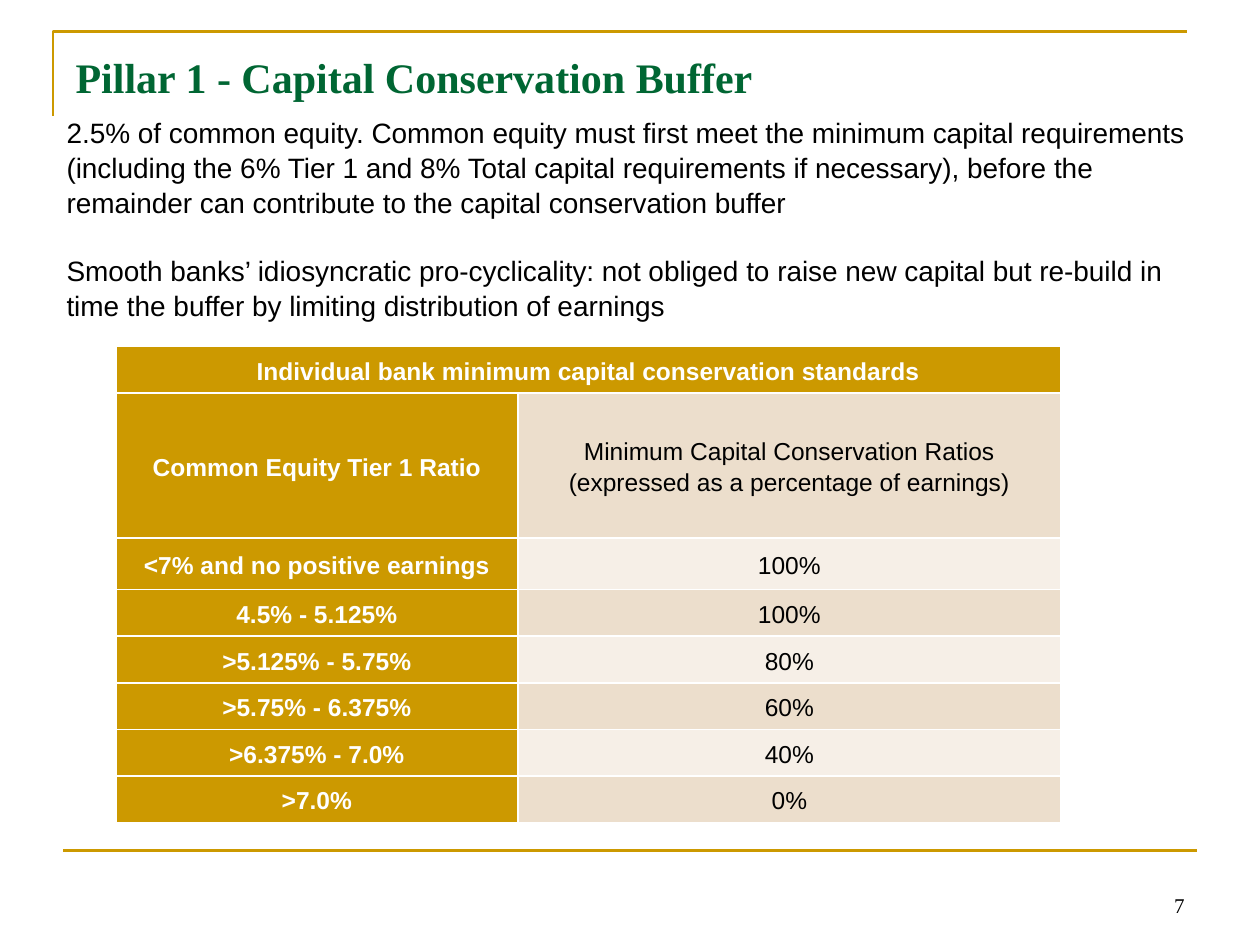
import dataclasses

import pptx
import pptx.dml.color
import pptx.enum.shapes
import pptx.enum.text
import pptx.oxml
import pptx.util

Inches = pptx.util.Inches
Pt = pptx.util.Pt
RGB = pptx.dml.color.RGBColor.from_string
ALIGN = pptx.enum.text.PP_ALIGN
ANCHOR = pptx.enum.text.MSO_ANCHOR


@dataclasses.dataclass(frozen=True)
class Theme:
    gold: str = "CC9900"
    green: str = "006633"
    black: str = "000000"
    white: str = "FFFFFF"
    bands: tuple = ("ECDECC", "F6EFE7")
    serif: str = "Times New Roman"
    sans: str = "Arial"
    title_size: float = 24
    body_size: float = 16
    table_size: float = 14
    number_size: float = 12
    rule_width: float = 1.5


THEME = Theme()

EXPLANATION = (
    "2.5% of common equity. Common equity must first meet the minimum capital "
    "requirements (including the 6% Tier 1 and 8% Total capital requirements if "
    "necessary), before the remainder can contribute to the capital conservation buffer",
    "Smooth banks’ idiosyncratic pro-cyclicality: not obliged to raise new capital "
    "but re-build in time the buffer by limiting distribution of earnings",
)
TABLE_TITLE = "Individual bank minimum capital conservation standards"
STANDARDS = (
    ("Common Equity Tier 1 Ratio",
     "Minimum Capital Conservation Ratios\n(expressed as a percentage of earnings)"),
    ("<7% and no positive earnings", "100%"),
    ("4.5% - 5.125%", "100%"),
    (">5.125% - 5.75%", "80%"),
    (">5.75% - 6.375%", "60%"),
    (">6.375% - 7.0%", "40%"),
    (">7.0%", "0%"),
)
COLUMN_WIDTHS = (3.19, 4.31)
ROW_HEIGHTS = (0.37, 1.15, 0.41) + (0.37,) * 5


def format_runs(paragraph, font_name, size, color, bold=False):
    for run in paragraph.runs:
        run.font.name = font_name
        run.font.size = Pt(size)
        run.font.color.rgb = RGB(color)
        run.font.bold = bold


def style_rule(rule):
    rule.line.color.rgb = RGB(THEME.gold)
    rule.line.width = Pt(THEME.rule_width)


def add_frame(slide, left, top, width, height):
    """Draw the corner line around the title."""
    builder = slide.shapes.build_freeform(Inches(left), Inches(top + height))
    corner = [(Inches(left), Inches(top)), (Inches(left + width), Inches(top))]
    builder.add_line_segments(corner, close=False)
    frame = builder.convert_to_shape()
    frame.shadow.inherit = False
    frame.fill.background()
    style_rule(frame)


def add_footer_rule(slide, left, top, width):
    rule = slide.shapes.add_connector(
        pptx.enum.shapes.MSO_CONNECTOR.STRAIGHT,
        Inches(left), Inches(top), Inches(left + width), Inches(top))
    style_rule(rule)
    properties = rule.element.spPr
    properties.append(properties.makeelement(pptx.oxml.ns.qn("a:effectLst"), {}))


def place_title(slide, left, top, width, height):
    title = slide.shapes.title
    title.left, title.top = Inches(left), Inches(top)
    title.width, title.height = Inches(width), Inches(height)
    title.text_frame.text = "Pillar 1 - Capital Conservation Buffer"
    title.text_frame.vertical_anchor = ANCHOR.MIDDLE
    heading = title.text_frame.paragraphs[0]
    heading.alignment = ALIGN.LEFT
    format_runs(heading, THEME.serif, THEME.title_size, THEME.green, bold=True)


def add_text_area(slide, box, text, anchor):
    area = slide.shapes.add_textbox(*map(Inches, box)).text_frame
    area.word_wrap = True
    area.vertical_anchor = anchor
    area.text = text
    return area


def add_explanation(slide, *box):
    explanation = add_text_area(slide, box, "\n".join(EXPLANATION), ANCHOR.MIDDLE)
    for paragraph in explanation.paragraphs:
        paragraph.line_spacing = 1.04
        format_runs(paragraph, THEME.sans, THEME.body_size, THEME.black)
    explanation.paragraphs[0].space_after = Pt(19)


def fill_cell(cell, text, fill, color, bold):
    cell.fill.solid()
    cell.fill.fore_color.rgb = RGB(fill)
    cell.margin_left = cell.margin_right = Inches(0.07)
    cell.margin_top = cell.margin_bottom = 0
    cell.vertical_anchor = ANCHOR.MIDDLE
    cell.text_frame.text = text
    for paragraph in cell.text_frame.paragraphs:
        paragraph.alignment = ALIGN.CENTER
        paragraph.line_spacing = 1.15
        format_runs(paragraph, THEME.sans, THEME.table_size, color, bold)


def add_standards(slide, left, top):
    standards = slide.shapes.add_table(
        len(ROW_HEIGHTS), len(COLUMN_WIDTHS), Inches(left), Inches(top),
        Inches(sum(COLUMN_WIDTHS)), Inches(sum(ROW_HEIGHTS))).table
    standards.first_col = True
    for column, width in zip(standards.columns, COLUMN_WIDTHS):
        column.width = Inches(width)
    for row, height in zip(standards.rows, ROW_HEIGHTS):
        row.height = Inches(height)

    standards.cell(0, 0).merge(standards.cell(0, 1))
    fill_cell(standards.cell(0, 0), TABLE_TITLE, THEME.gold, THEME.white, True)
    for index, (equity_ratio, conservation_ratio) in enumerate(STANDARDS):
        row = index + 1
        fill_cell(standards.cell(row, 0), equity_ratio, THEME.gold, THEME.white, True)
        fill_cell(standards.cell(row, 1), conservation_ratio,
                  THEME.bands[index % 2], THEME.black, False)


def add_page_number(slide, *box):
    number = add_text_area(slide, box, "7", ANCHOR.BOTTOM).paragraphs[0]
    number.alignment = ALIGN.RIGHT
    format_runs(number, THEME.serif, THEME.number_size, THEME.black)


def main():
    presentation = pptx.Presentation()
    presentation.slide_width = Inches(10)
    presentation.slide_height = Inches(7.5)
    slide = presentation.slides.add_slide(presentation.slide_layouts[5])
    slide.background.fill.solid()
    slide.background.fill.fore_color.rgb = RGB(THEME.white)

    add_frame(slide, 0.42, 0.25, 9, 0.67)
    add_footer_rule(slide, 0.5, 6.75, 9)
    place_title(slide, 0.5, 0.3, 9, 0.61)
    add_explanation(slide, 0.43, 0.87, 9.17, 1.72)
    add_standards(slide, 0.92, 2.75)
    add_page_number(slide, 7.17, 6.83, 2.33, 0.5)
    presentation.save("out.pptx")


if __name__ == "__main__":
    main()
